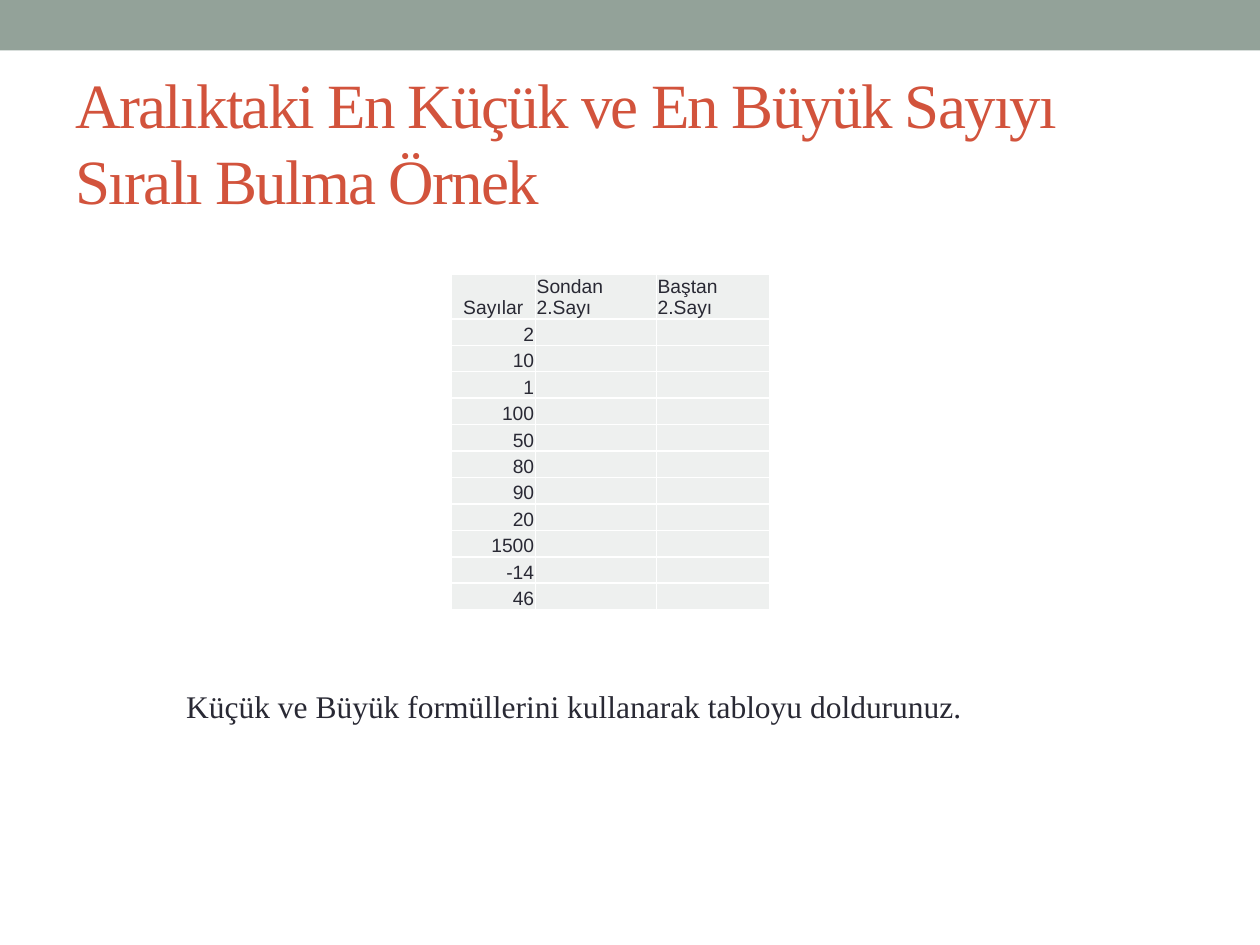
from pptx import Presentation
from pptx.dml.color import RGBColor
from pptx.enum.shapes import MSO_SHAPE
from pptx.enum.text import MSO_ANCHOR, MSO_AUTO_SIZE, PP_ALIGN
from pptx.oxml.ns import qn
from pptx.util import Inches, Pt
from lxml.etree import SubElement

SERIF, SANS = "Times New Roman", "Arial"
BAND, ACCENT, INK, CELL, RULE = "93A299", "D2533C", "292934", "EEF0EF", "FFFFFF"
HEADINGS = ["Sayılar", "Sondan 2.Sayı", "Baştan 2.Sayı"]
NUMBERS = [2, 10, 1, 100, 50, 80, 90, 20, 1500, -14, 46]
COLUMN_WIDTHS = [0.67, 0.96, 0.9]
ROW_HEIGHT, HEADING_HEIGHT = 0.21, 0.35


def color(hex_value):
    return RGBColor.from_string(hex_value)


def box(left, top, width, height):
    return [Inches(length) for length in (left, top, width, height)]


def write(frame, text, font_name, size, hex_value, align=PP_ALIGN.LEFT):
    paragraph = frame.paragraphs[0]
    paragraph.alignment = align
    run = paragraph.add_run()
    run.text = text
    for name, value in {"name": font_name, "size": Pt(size)}.items():
        setattr(run.font, name, value)
    run.font.color.rgb = color(hex_value)
    return run


def add_band(slide):
    band = slide.shapes.add_shape(MSO_SHAPE.RECTANGLE, *box(0, 0, 10, 0.4))
    band.shadow.inherit = False
    band.fill.solid()
    band.fill.fore_color.rgb = color(BAND)
    band.line.fill.background()


def set_title(slide, text):
    title = slide.shapes.title
    title.left, title.top, title.width, title.height = box(0.5, 0.58, 9, 1.08)
    frame = title.text_frame
    frame.auto_size = MSO_AUTO_SIZE.NONE
    frame.vertical_anchor = MSO_ANCHOR.MIDDLE
    heading = write(frame, text, SERIF, 36, ACCENT)
    heading.font._element.set("spc", "-100")


def format_cell(cell):
    formats = {
        "margin_left": Inches(0.01), "margin_right": Inches(0.01),
        "margin_top": Inches(0.01), "margin_bottom": 0,
        "vertical_anchor": MSO_ANCHOR.BOTTOM,
    }
    for name, value in formats.items():
        setattr(cell, name, value)
    # Borders come before the fill in the cell properties
    properties = cell._tc.get_or_add_tcPr()
    for side in ("a:lnL", "a:lnR", "a:lnT", "a:lnB"):
        border = SubElement(properties, qn(side), w=str(Pt(1)))
        fill = SubElement(border, qn("a:solidFill"))
        SubElement(fill, qn("a:srgbClr"), val=RULE)
    cell.fill.solid()
    cell.fill.fore_color.rgb = color(CELL)


def fill_cell(cell, text, align):
    format_cell(cell)
    if text:
        write(cell.text_frame, text, SANS, 11, INK, align)
    else:
        # Keeps an empty cell from growing taller than its row
        SubElement(cell.text_frame.paragraphs[0]._p, qn("a:endParaRPr"), sz="1100")


def add_number_table(slide):
    rows = [HEADINGS] + [[str(number), "", ""] for number in NUMBERS]
    height = HEADING_HEIGHT + ROW_HEIGHT * len(NUMBERS)
    table = slide.shapes.add_table(
        len(rows), len(HEADINGS), *box(3.58, 2.18, sum(COLUMN_WIDTHS), height)).table
    for column, width in zip(table.columns, COLUMN_WIDTHS):
        column.width = Inches(width)
    for r, texts in enumerate(rows):
        table.rows[r].height = Inches(ROW_HEIGHT if r else HEADING_HEIGHT)
        first_align = PP_ALIGN.RIGHT if r else PP_ALIGN.CENTER
        for c, text in enumerate(texts):
            fill_cell(table.cell(r, c), text, PP_ALIGN.LEFT if c else first_align)
    table.first_row = table.horz_banding = False


def add_task(slide, text):
    frame = slide.shapes.add_textbox(*box(1.38, 5.4, 7.4, 0.4)).text_frame
    frame.word_wrap = True
    frame.auto_size = MSO_AUTO_SIZE.SHAPE_TO_FIT_TEXT
    write(frame, text, SERIF, 18, INK)


def main():
    presentation = Presentation()
    presentation.slide_width, presentation.slide_height = Inches(10), Inches(7.5)
    slide = presentation.slides.add_slide(presentation.slide_layouts[5])

    # Top band and title
    add_band(slide)
    set_title(slide, "Aralıktaki En Küçük ve En Büyük Sayıyı Sıralı Bulma Örnek")

    # Exercise
    add_number_table(slide)
    add_task(slide, "Küçük ve Büyük formüllerini kullanarak tabloyu doldurunuz.")

    presentation.save("out.pptx")


if __name__ == "__main__":
    main()
